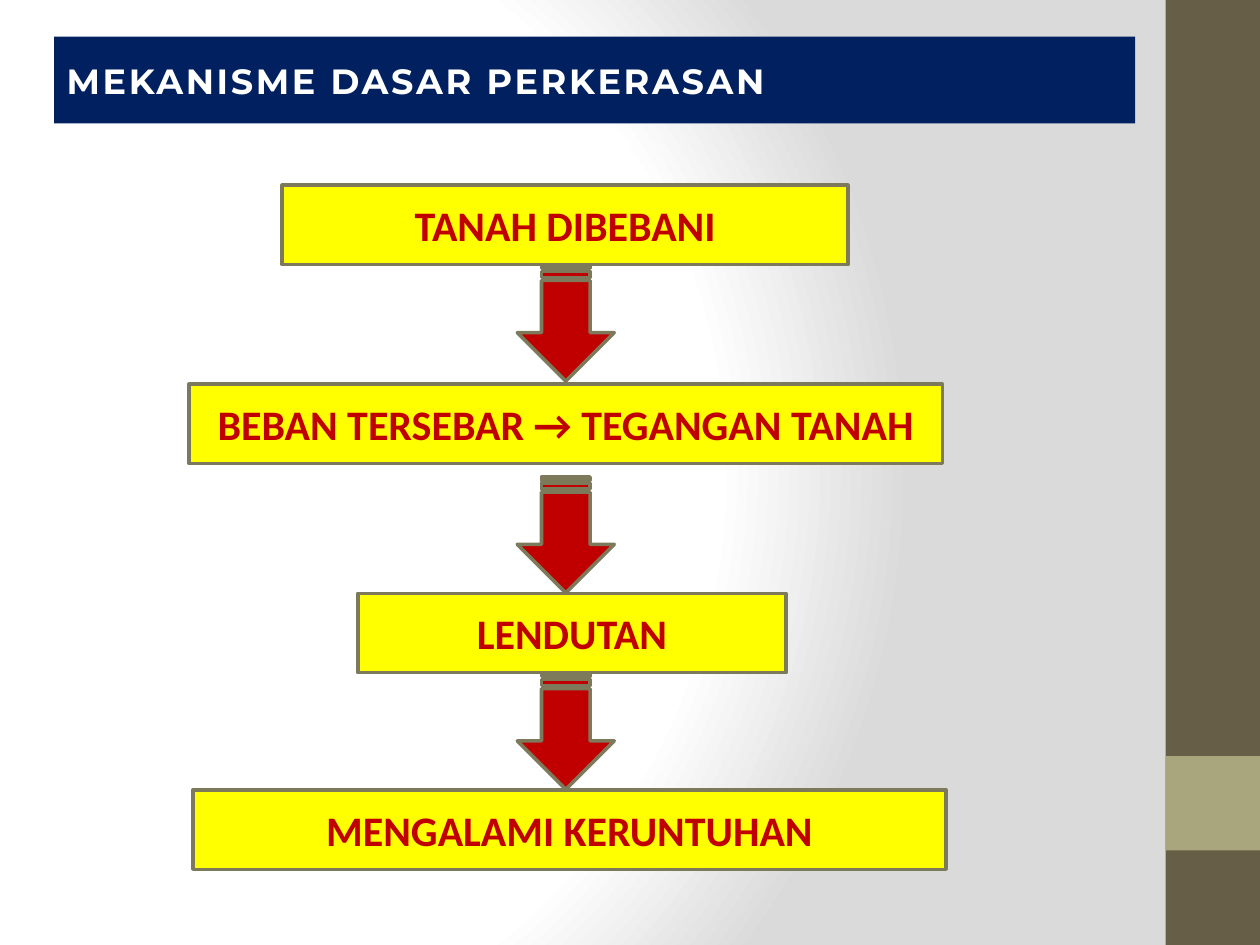
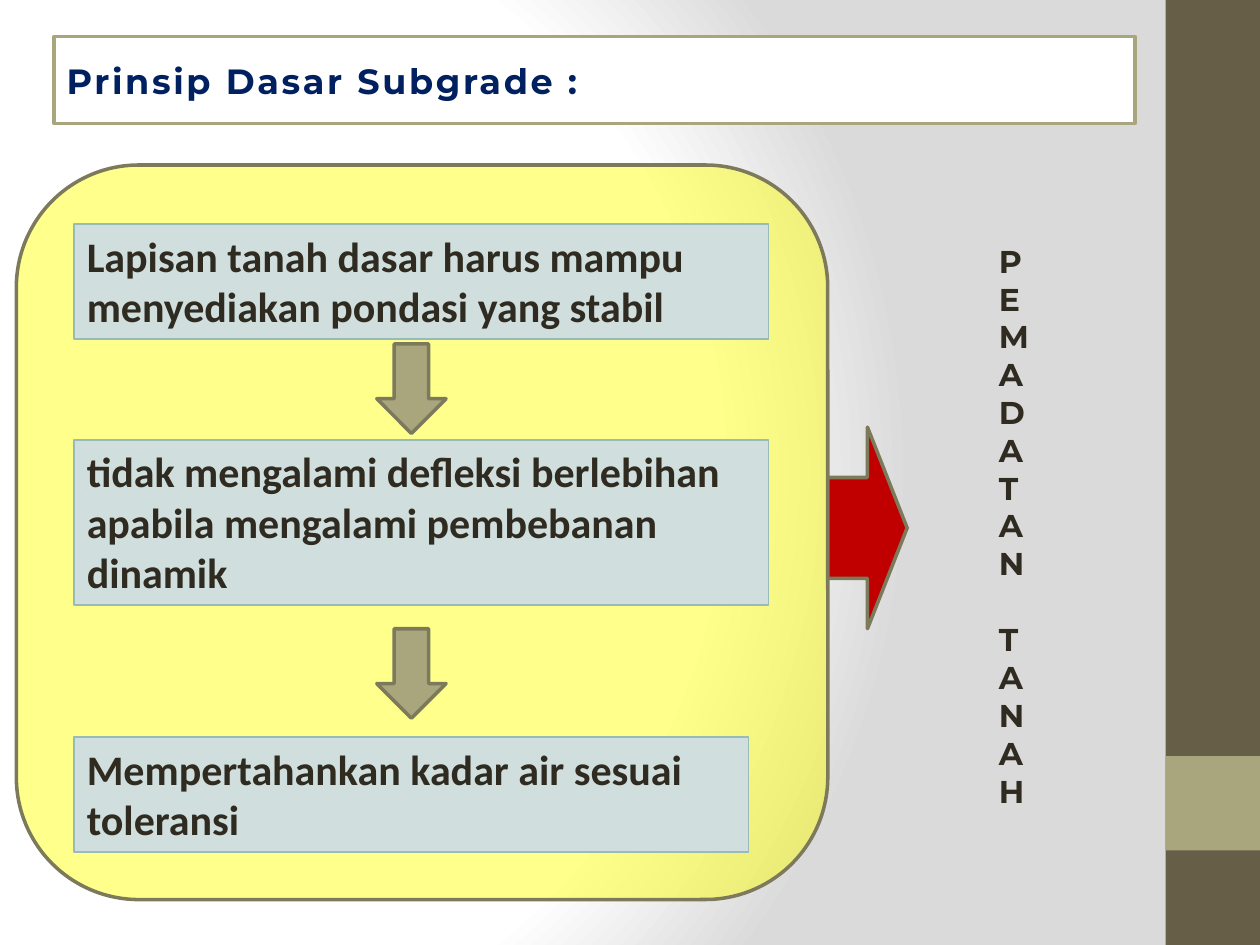
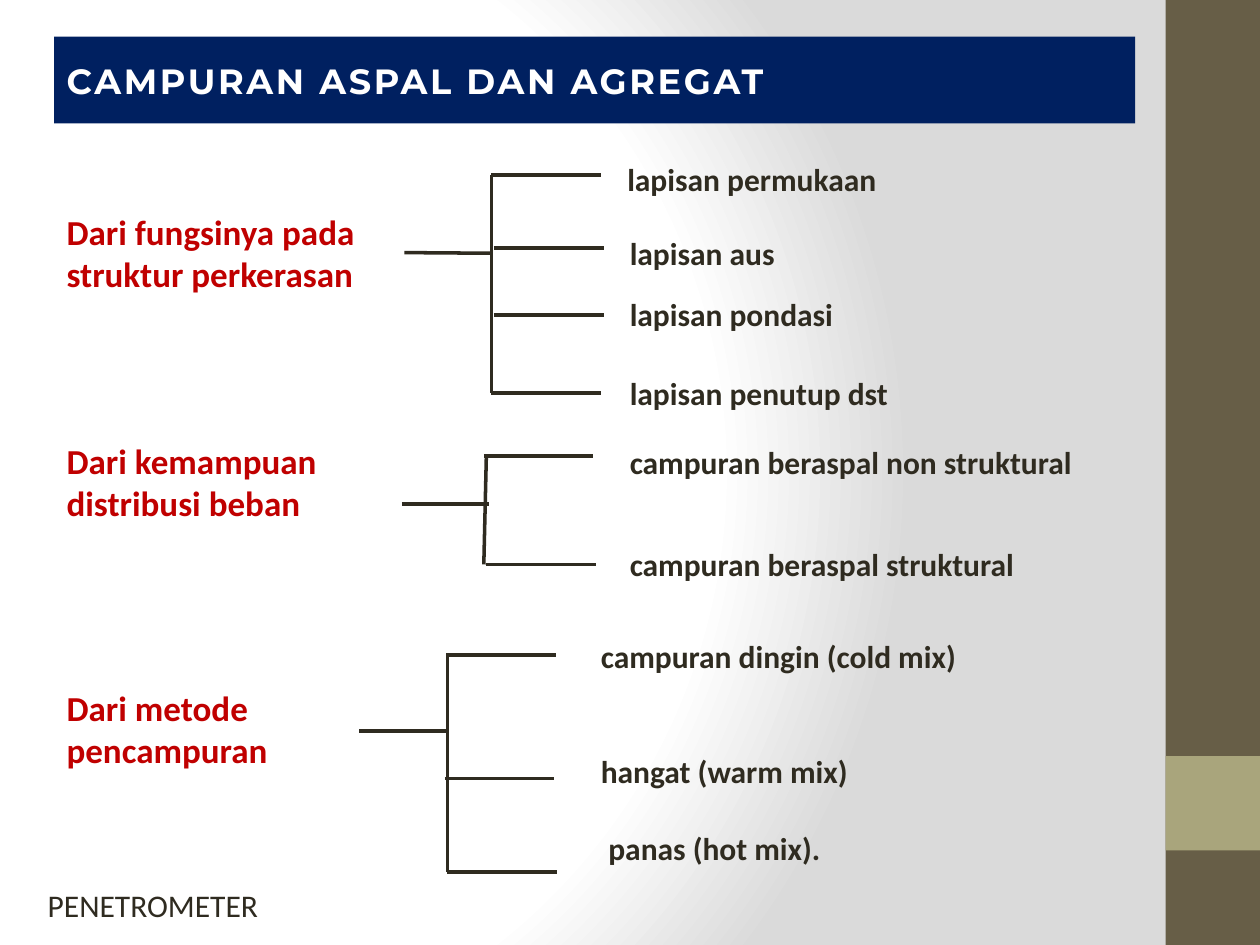
from dataclasses import dataclass, replace
from typing import Optional

from lxml import etree
from pptx import Presentation
from pptx.dml.color import RGBColor
from pptx.enum.shapes import MSO_CONNECTOR, MSO_SHAPE
from pptx.enum.text import MSO_ANCHOR, MSO_AUTO_SIZE, PP_ALIGN
from pptx.oxml import parse_xml
from pptx.oxml.ns import nsdecls, qn
from pptx.util import Inches, Pt

RECT = MSO_SHAPE.RECTANGLE
ROUND = MSO_SHAPE.ROUNDED_RECTANGLE
STRIPED = MSO_SHAPE.STRIPED_RIGHT_ARROW
DOWN = MSO_SHAPE.DOWN_ARROW
RIGHT = MSO_SHAPE.RIGHT_ARROW
STRAIGHT = MSO_CONNECTOR.STRAIGHT
MIDDLE, TOP = MSO_ANCHOR.MIDDLE, MSO_ANCHOR.TOP
CENTER, LEFT = PP_ALIGN.CENTER, PP_ALIGN.LEFT
GROW = MSO_AUTO_SIZE.SHAPE_TO_FIT_TEXT

BROWN, OLIVE, EDGE = "675E47", "A9A57C", "7D7A5C"
NAVY, WHITE, YELLOW = "002060", "FFFFFF", "FFFF00"
RED, INK, GRAY = "C00000", "2F2B20", "DADADA"
PALE, TEAL = "D0DEDE", "98BBBA"

Box = tuple[float, float, float, float]
Point = tuple[float, float]


@dataclass(frozen=True)
class Font:
    size: float
    color: str = INK
    name: str = "Calibri"
    bold: bool = True
    track: float = 0


@dataclass(frozen=True)
class Look:
    fill: str
    line: Optional[str] = EDGE
    width: float = 2
    alpha: int = 100
    turn: float = 0


@dataclass(frozen=True)
class Para:
    text: str
    before: float = 0
    indent: float = 0


@dataclass(frozen=True)
class Note:
    text: str
    box: Box
    wrap: bool = False


HEAD = Font(20, WHITE, "Montserrat", track=1.5)
STEP = Font(24, RED)
RULE = Font(24)
GROUP = Font(20, RED)
ITEM = Font(18)
SIDE = Font(18, name="Montserrat")

STEP_LOOK = Look(YELLOW)
RULE_LOOK = Look(PALE, TEAL, 1)
DROP_LOOK = Look(RED, turn=90)


def paint(color: str) -> RGBColor:
    return RGBColor.from_string(color)


def place(box: Box) -> list[int]:
    return [Inches(n) for n in box]


def write(shape, paras: list[Para], font: Font, align=LEFT, anchor=TOP,
          wrap: bool = True, grow: bool = False) -> None:
    frame = shape.text_frame
    frame.word_wrap = wrap
    frame.vertical_anchor = anchor
    if grow:
        frame.auto_size = GROW
    for i, para in enumerate(paras):
        line = frame.add_paragraph() if i else frame.paragraphs[0]
        line.alignment = align
        if para.before:
            line.space_before = Pt(para.before)
        if para.indent:
            line._p.get_or_add_pPr().set("marL", str(Inches(para.indent)))
        run = line.add_run()
        run.text = para.text
        run.font.name = font.name
        run.font.size = Pt(font.size)
        run.font.bold = font.bold
        run.font.color.rgb = paint(font.color)
        if font.track:
            run._r.get_or_add_rPr().set("spc", str(int(font.track * 100)))


def draw(slide, kind, box: Box, look: Look):
    shape = slide.shapes.add_shape(kind, *place(box))
    shape.shadow.inherit = False
    shape.rotation = look.turn
    shape.fill.solid()
    shape.fill.fore_color.rgb = paint(look.fill)
    if look.alpha < 100:
        color = shape._element.spPr.find(".//" + qn("a:srgbClr"))
        etree.SubElement(color, qn("a:alpha")).set("val", str(look.alpha * 1000))
    if look.line:
        shape.line.color.rgb = paint(look.line)
        shape.line.width = Pt(look.width)
    else:
        shape.line.fill.background()
    return shape


def label(slide, box: Box, paras: list[Para], font: Font, wrap: bool = True):
    shape = slide.shapes.add_textbox(*place(box))
    write(shape, paras, font, wrap=wrap, grow=True)
    return shape


def link(slide, start: Point, end: Point):
    line = slide.shapes.add_connector(STRAIGHT, *place(start + end))
    line.line.color.rgb = paint(INK)
    line.line.width = Pt(2)
    etree.SubElement(line._element.spPr, qn("a:effectLst"))
    return line


def set_back(master) -> None:
    """Give every slide the radial white to gray background."""
    master.background.fill.solid()
    back = master.element.find(".//" + qn("p:bgPr"))
    stops = "".join(
        f'<a:gs pos="{pos * 1000}"><a:srgbClr val="{color}"/></a:gs>'
        for pos, color in ((0, WHITE), (75, WHITE), (100, GRAY)))
    back.replace(back[0], parse_xml(
        f'<a:gradFill {nsdecls("a")} rotWithShape="1"><a:gsLst>{stops}</a:gsLst>'
        '<a:path path="circle"><a:fillToRect l="20000" t="50000" r="100000" '
        'b="50000"/></a:path></a:gradFill>'))


def start(deck):
    """Add a blank slide with the bands at its right edge."""
    slide = deck.slides.add_slide(deck.slide_layouts[6])
    draw(slide, RECT, (9.25, 0, 0.75, 7.5), Look(BROWN, None))
    draw(slide, RECT, (9.25, 6, 0.75, 0.75), Look(OLIVE, None))
    return slide


def title(slide, text: str, look: Look = Look(NAVY, None), font: Font = HEAD) -> None:
    bar = draw(slide, RECT, (0.43, 0.29, 8.58, 0.69), look)
    write(bar, [Para(text)], font, anchor=MIDDLE)


def add_flow(deck) -> None:
    slide = start(deck)
    title(slide, "MEKANISME DASAR PERKERASAN")
    steps = [
        Note("TANAH DIBEBANI", (2.24, 1.47, 4.49, 0.63)),
        Note("BEBAN TERSEBAR → TEGANGAN TANAH", (1.5, 3.05, 5.98, 0.63)),
        Note("LENDUTAN", (2.84, 4.71, 3.4, 0.63)),
        Note("MENGALAMI KERUNTUHAN", (1.53, 6.27, 5.98, 0.63)),
    ]
    for step in steps:
        shape = draw(slide, RECT, step.box, STEP_LOOK)
        write(shape, [Para(step.text)], STEP, CENTER, MIDDLE)
    for top in (2.18, 3.86, 5.42):
        draw(slide, STRIPED, (4.03, top, 0.92, 0.77), DROP_LOOK)


def add_rules(deck) -> None:
    slide = start(deck)
    draw(slide, ROUND, (0.13, 1.31, 6.44, 5.83), Look(YELLOW, alpha=45))
    title(slide, "Prinsip Dasar Subgrade :", Look(WHITE, OLIVE),
          replace(HEAD, color=NAVY))
    rules = [
        Note("Lapisan tanah dasar harus mampu menyediakan pondasi yang stabil",
             (0.59, 1.78, 5.51, 0.91)),
        Note("tidak mengalami defleksi berlebihan apabila mengalami "
             "pembebanan dinamik", (0.59, 3.49, 5.51, 1.31)),
        Note("Mempertahankan kadar air sesuai toleransi",
             (0.59, 5.85, 5.35, 0.91)),
    ]
    for rule in rules:
        shape = draw(slide, RECT, rule.box, RULE_LOOK)
        write(shape, [Para(rule.text)], RULE, grow=True)
    for top in (2.73, 4.99):
        draw(slide, DOWN, (2.99, top, 0.55, 0.71), Look(OLIVE))
    draw(slide, RIGHT, (6.57, 3.39, 0.63, 1.6), Look(RED))
    label(slide, (7.83, 1.87, 0.47, 4.64),
          [Para("PEMADATAN"), Para("TANAH", before=22)], SIDE)


def add_tree(deck) -> None:
    slide = start(deck)
    title(slide, "CAMPURAN ASPAL DAN AGREGAT")
    label(slide, (0.28, 6.98, 1.88, 0.4), [Para("PENETROMETER")],
          replace(ITEM, bold=False), wrap=False)

    groups = [
        label(slide, (0.43, top, 2.78, 0.77), [Para(text)], GROUP)
        for top, text in (
            (1.62, "Dari fungsinya pada struktur perkerasan"),
            (3.44, "Dari kemampuan distribusi beban"),
            (5.4, "Dari metode pencampuran"))
    ]
    items = [
        Note("lapisan permukaan", (4.88, 1.22, 2.19, 0.4)),
        Note("lapisan aus", (4.9, 1.81, 1.36, 0.4)),
        Note("lapisan pondasi", (4.9, 2.29, 1.83, 0.4)),
        Note("lapisan penutup dst", (4.9, 2.92, 2.33, 0.4)),
        Note("campuran beraspal non struktural", (4.9, 3.47, 5, 0.4), True),
        Note("campuran beraspal struktural", (4.9, 4.28, 5, 0.4), True),
    ]
    for item in items:
        label(slide, item.box, [Para(item.text)], ITEM, item.wrap)
    label(slide, (4.67, 5.01, 3.71, 1.92), [
        Para("campuran dingin (cold mix)"),
        Para("hangat (warm mix)", before=44),
        Para("panas (hot mix).", before=22, indent=0.06),
    ], ITEM)

    stem = link(slide, (3.21, 2.01), (3.9, 2.01))
    stem.begin_connect(groups[0], 3)
    for left, y in ((3.19, 4), (2.85, 5.8)):
        link(slide, (left, y), (left + 0.69, y))
    for head, foot in (((3.9, 1.39), (3.9, 3.12)),
                       ((3.86, 3.62), (3.84, 4.48)),
                       ((3.55, 5.19), (3.55, 6.92))):
        link(slide, head, foot)
    twigs = [(3.9, 1.39), (3.92, 1.97), (3.92, 2.5), (3.9, 3.12),
             (3.84, 3.62), (3.86, 4.48),
             (3.54, 5.2), (3.53, 6.18), (3.55, 6.92)]
    for left, y in twigs:
        link(slide, (left, y), (left + 0.87, y))


def main() -> None:
    deck = Presentation()
    deck.slide_width, deck.slide_height = Inches(10), Inches(7.5)
    set_back(deck.slide_master)
    add_flow(deck)
    add_rules(deck)
    add_tree(deck)
    deck.save("out.pptx")


if __name__ == "__main__":
    main()
